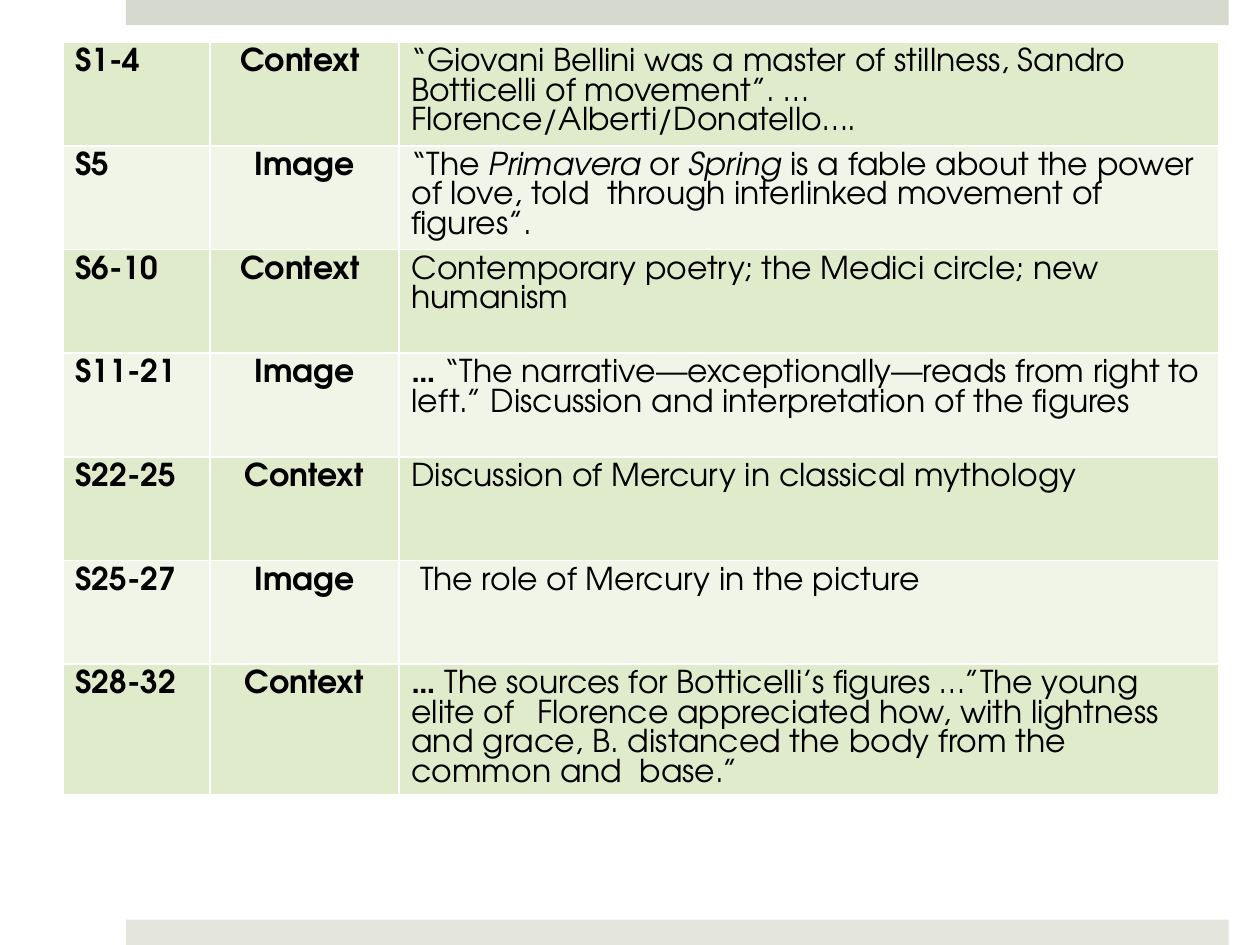
from lxml import etree
from pptx import Presentation
from pptx import util as u
from pptx.dml.color import RGBColor
from pptx.enum import shapes, text
from pptx.oxml.ns import qn

FONT = "TeX Gyre Adventor"
BAND_FILLS = ("E0EBCC", "F0F5E8")
COLUMN_WIDTHS = (2.96, 3.81, 16.52)
ROW_HEIGHT = 2.09
BOLD, ITALIC = "bold", "italic"

ROWS = [
    ("S1-4", "Context ", [
        ("“Giovani Bellini was a master of stillness, Sandro Botticelli of "
         "movement”. … Florence/Alberti/Donatello….", None)]),
    ("S5", "Image", [
        ("“The ", None), ("Primavera", ITALIC), (" or ", None), ("Spring", ITALIC),
        (" is a fable about the power of love, told  through interlinked "
         "movement of figures”.", None)]),
    ("S6-10", "Context ", [
        ("Contemporary poetry; the Medici circle; new humanism", None)]),
    ("S11-21", "Image", [
        ("… ", BOLD),
        ("“The narrative—exceptionally—reads from right to left.” "
         "Discussion and interpretation of the figures", None)]),
    ("S22-25", "Context", [("Discussion of Mercury in classical mythology", None)]),
    ("S25-27", "Image", [(" The role of Mercury in the picture", None)]),
    ("S28-32", "Context", [
        ("… ", BOLD),
        ("The sources for Botticelli’s figures …”The young elite of \tFlorence "
         "appreciated how, with lightness and grace, B. distanced the body "
         "from the common and  base.”", None)]),
]


def color(value):
    """Return the colour for a hex string."""
    return RGBColor.from_string(value)


def add_bar(slide, top, fill):
    """Add a thin horizontal band at the given height."""
    bar = slide.shapes.add_shape(
        shapes.MSO_SHAPE.RECTANGLE, u.Cm(2.54), u.Cm(top), u.Cm(22.23), u.Cm(0.51))
    bar.shadow.inherit = False
    bar.fill.solid()
    bar.fill.fore_color.rgb = color(fill)
    bar.line.fill.background()


def set_borders(cell, value, width):
    """Draw a solid line on all four sides of a cell."""
    properties = cell._tc.get_or_add_tcPr()
    for side in ("a:lnL", "a:lnR", "a:lnT", "a:lnB"):
        line = etree.SubElement(properties, qn(side), w=str(u.Pt(width)))
        fill = etree.SubElement(line, qn("a:solidFill"))
        etree.SubElement(fill, qn("a:srgbClr"), val=value)


def fill_cell(cell, runs, fill, alignment):
    """Write styled runs into a cell and set its fill and borders."""
    set_borders(cell, "FFFFFF", 1)
    cell.fill.solid()
    cell.fill.fore_color.rgb = color(fill)
    paragraph = cell.text_frame.paragraphs[0]
    paragraph.alignment = alignment
    for content, style in runs:
        run = paragraph.add_run()
        run.text = content
        run.font.name = FONT
        run.font.size = u.Pt(18)
        run.font.bold = style == BOLD
        run.font.italic = style == ITALIC
        run.font.color.rgb = color("000000")


def add_outline_table(slide):
    """Add the table of sentences, their focus and their content."""
    table = slide.shapes.add_table(
        len(ROWS), len(COLUMN_WIDTHS), u.Cm(1.27), u.Cm(0.85),
        u.Cm(sum(COLUMN_WIDTHS)), u.Cm(ROW_HEIGHT * len(ROWS))).table
    for column, width in zip(table.columns, COLUMN_WIDTHS):
        column.width = u.Cm(width)
    left, center = text.PP_ALIGN.LEFT, text.PP_ALIGN.CENTER
    for index, (sentences, focus, content) in enumerate(ROWS):
        table.rows[index].height = u.Cm(ROW_HEIGHT)
        fill = BAND_FILLS[index % 2]
        fill_cell(table.cell(index, 0), [(sentences, BOLD)], fill, left)
        fill_cell(table.cell(index, 1), [(focus, BOLD)], fill, center)
        fill_cell(table.cell(index, 2), content, fill, left)


def main():
    """Build the slide and save it."""
    presentation = Presentation()
    presentation.slide_width = u.Cm(25.4)
    presentation.slide_height = u.Cm(19.05)
    slide = presentation.slides.add_slide(presentation.slide_layouts[6])
    add_bar(slide, 0, "D6D9CD")
    add_bar(slide, 18.54, "E4E6DE")
    add_outline_table(slide)
    presentation.save("out.pptx")


if __name__ == "__main__":
    main()
